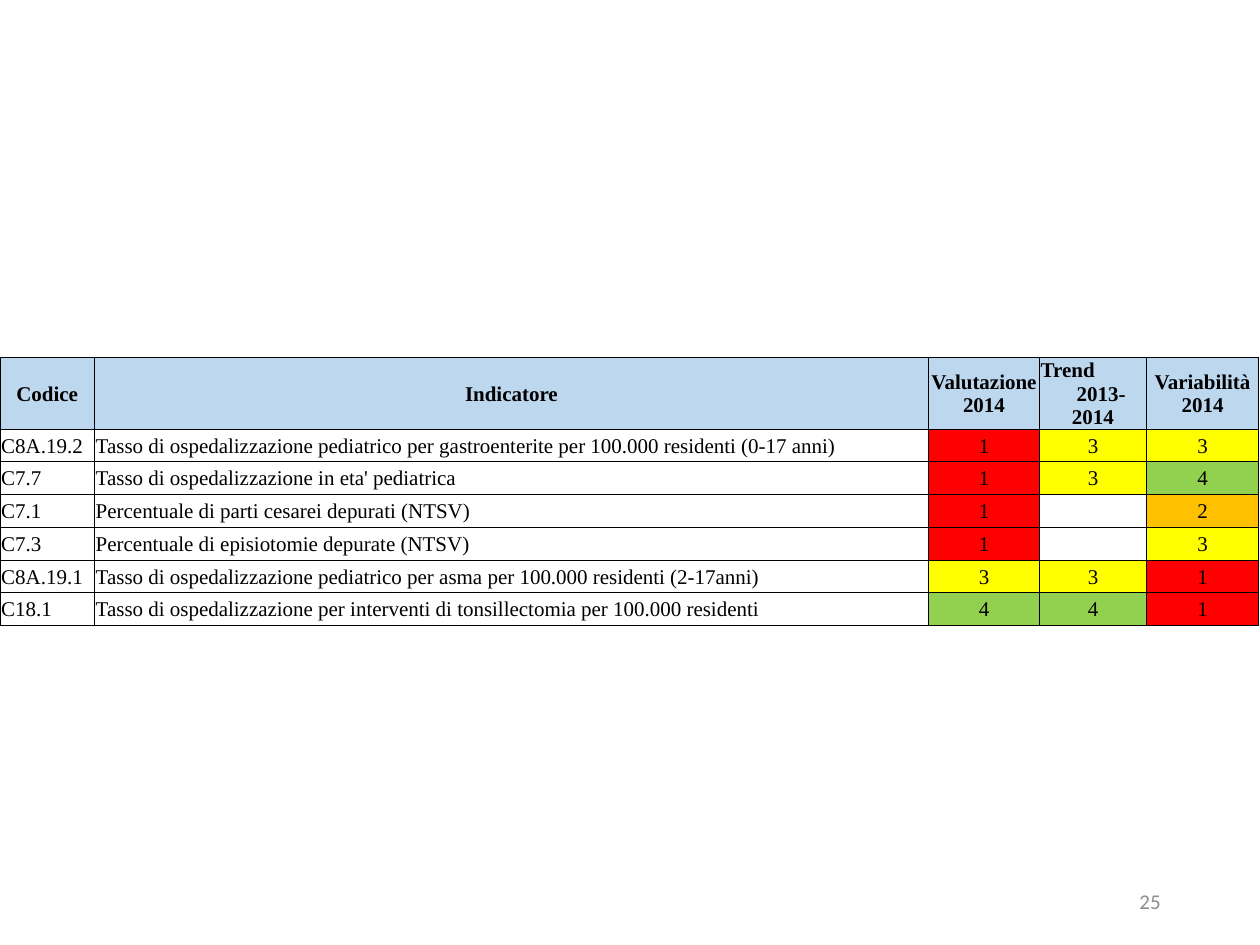
from lxml.etree import SubElement
from pptx import Presentation
from pptx.dml.color import RGBColor
from pptx.enum.text import MSO_ANCHOR, PP_ALIGN
from pptx.oxml.ns import qn
from pptx.util import Inches, Pt

COLORS = {"header": "BDD7EE", "text": "000000", "border": "000000", "number": "8C8C8C"}
SCORE_COLORS = {"1": "FF0000", "2": "FFC000", "3": "FFFF00", "4": "92D050"}
HEADERS = ["Codice", "Indicatore", "Valutazione 2014", "Trend\n2013-2014", "Variabilità 2014"]
INDICATORS = [
    ("C8A.19.2", "Tasso di ospedalizzazione pediatrico per gastroenterite per 100.000 residenti (0-17 anni)", "1", "3", "3"),
    ("C7.7", "Tasso di ospedalizzazione in eta' pediatrica", "1", "3", "4"),
    ("C7.1", "Percentuale di parti cesarei depurati (NTSV)", "1", "", "2"),
    ("C7.3", "Percentuale di episiotomie depurate (NTSV)", "1", "", "3"),
    ("C8A.19.1", "Tasso di ospedalizzazione pediatrico per asma per 100.000 residenti (2-17anni)", "3", "3", "1"),
    ("C18.1", "Tasso di ospedalizzazione per interventi di tonsillectomia per 100.000 residenti", "4", "4", "1"),
]
COL_WIDTHS = [0.75, 6.62, 0.88, 0.85, 0.89]
HEADER_HEIGHT, ROW_HEIGHT = 0.51, 0.26
TREND_COL, FIRST_SCORE_COL = 3, 2


def set_font(p, name, color, bold=False):
    p.font.name = name
    p.font.size = Pt(12)
    p.font.bold = bold
    p.font.color.rgb = RGBColor.from_string(color)


def set_borders(cell):
    tcPr = cell._tc.get_or_add_tcPr()
    for i, side in enumerate(("a:lnL", "a:lnR", "a:lnT", "a:lnB")):
        ln = SubElement(tcPr, qn(side), w=str(Pt(0.5)))
        fill = SubElement(ln, qn("a:solidFill"))
        SubElement(fill, qn("a:srgbClr"), val=COLORS["border"])
        tcPr.remove(ln)
        tcPr.insert(i, ln)


def fill_cell(cell, text, fill, align, bold):
    cell.margin_left = cell.margin_right = cell.margin_top = Inches(0.01)
    cell.margin_bottom = 0
    cell.vertical_anchor = MSO_ANCHOR.MIDDLE
    cell.text = text
    for p in cell.text_frame.paragraphs:
        p.alignment = align
        set_font(p, "Times New Roman", COLORS["text"], bold)
    if fill:
        cell.fill.solid()
        cell.fill.fore_color.rgb = RGBColor.from_string(fill)
    else:
        cell.fill.background()
    set_borders(cell)


prs = Presentation()
prs.slide_width, prs.slide_height = Inches(10), Inches(7.5)
s = prs.slides.add_slide(prs.slide_layouts[6])

height = HEADER_HEIGHT + ROW_HEIGHT * len(INDICATORS)
table = s.shapes.add_table(len(INDICATORS) + 1, len(HEADERS), 0, Inches(2.84),
                           Inches(sum(COL_WIDTHS)), Inches(height)).table
for col, width in zip(table.columns, COL_WIDTHS):
    col.width = Inches(width)
for i, row in enumerate(table.rows):
    row.height = Inches(ROW_HEIGHT if i else HEADER_HEIGHT)

for c, header in enumerate(HEADERS):
    fill_cell(table.cell(0, c), header, COLORS["header"], PP_ALIGN.CENTER, True)
for r, indicator in enumerate(INDICATORS, 1):
    for c, text in enumerate(indicator):
        align = PP_ALIGN.CENTER if c >= FIRST_SCORE_COL else PP_ALIGN.LEFT
        fill_cell(table.cell(r, c), text, SCORE_COLORS.get(text), align, False)

trend, years = table.cell(0, TREND_COL).text_frame.paragraphs
trend.alignment = PP_ALIGN.LEFT
years._p.get_or_add_pPr().set("indent", str(Inches(0.13)))

tf = s.shapes.add_textbox(Inches(7.06), Inches(6.95), Inches(2.25), Inches(0.4)).text_frame
tf.word_wrap = True
tf.vertical_anchor = MSO_ANCHOR.MIDDLE
p = tf.paragraphs[0]
p.text = "25"
p.alignment = PP_ALIGN.RIGHT
set_font(p, "Calibri", COLORS["number"])

prs.save("out.pptx")
